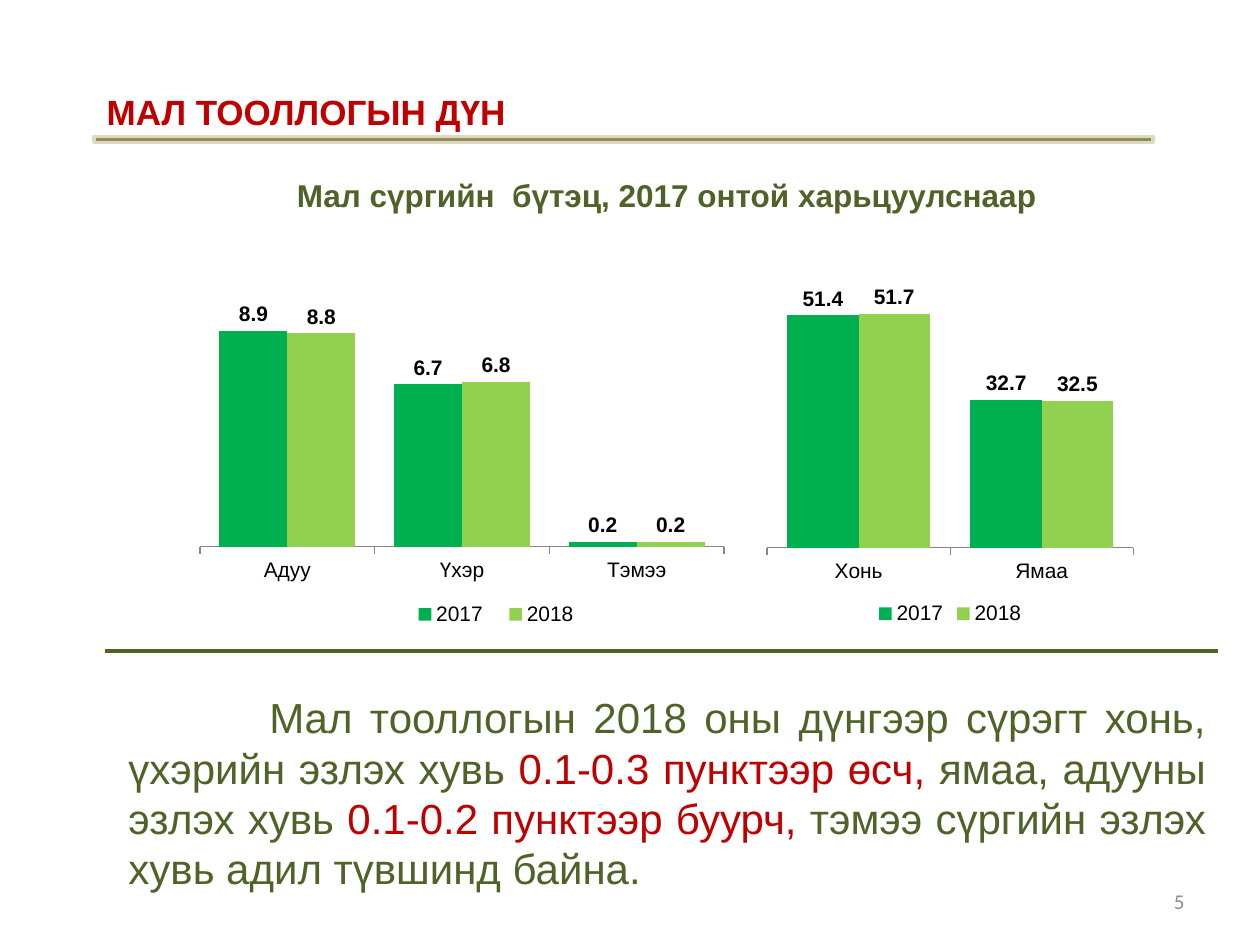
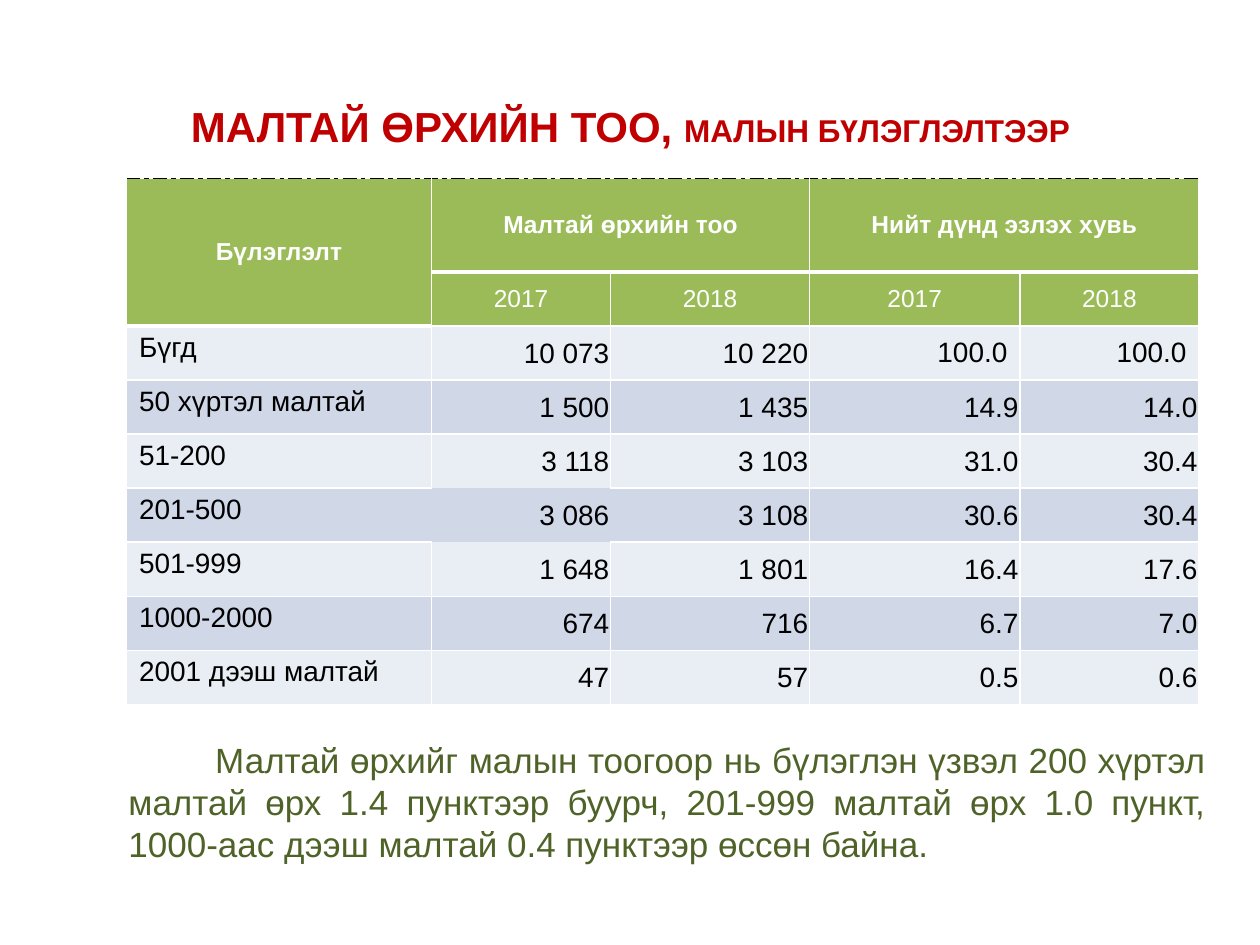
from lxml import etree
from pptx import Presentation
from pptx.chart.data import CategoryChartData
from pptx.dml.color import RGBColor
from pptx.enum.chart import XL_CHART_TYPE, XL_LEGEND_POSITION, XL_LABEL_POSITION, XL_TICK_MARK
from pptx.enum.shapes import MSO_CONNECTOR, MSO_SHAPE
from pptx.enum.text import MSO_ANCHOR, PP_ALIGN
from pptx.oxml.ns import qn
from pptx.util import Cm, Pt

LEFT, CENTER, RIGHT, JUSTIFY = PP_ALIGN.LEFT, PP_ALIGN.CENTER, PP_ALIGN.RIGHT, PP_ALIGN.JUSTIFY
TOP, MIDDLE = MSO_ANCHOR.TOP, MSO_ANCHOR.MIDDLE
COLUMNS = XL_CHART_TYPE.COLUMN_CLUSTERED
LEGEND_BOTTOM = XL_LEGEND_POSITION.BOTTOM
OUTSIDE_END = XL_LABEL_POSITION.OUTSIDE_END
TICK_OUT = XL_TICK_MARK.OUTSIDE

RED = RGBColor(0xC0, 0x00, 0x00)
DARK_GREEN = RGBColor(0x4F, 0x62, 0x28)
BLACK = RGBColor(0x00, 0x00, 0x00)
WHITE = RGBColor(0xFF, 0xFF, 0xFF)
GRAY = RGBColor(0x8C, 0x8C, 0x8C)
AXIS_GRAY = RGBColor(0x86, 0x86, 0x86)
KHAKI = RGBColor(0x94, 0x8A, 0x54)
SAND = RGBColor(0xDD, 0xD9, 0xC3)
HEADER_GREEN = RGBColor(0x9B, 0xBB, 0x59)
ROW_FILLS = (RGBColor(0xE9, 0xED, 0xF4), RGBColor(0xD0, 0xD8, 0xE8))
SERIES_COLORS = (RGBColor(0x00, 0xB0, 0x50), RGBColor(0x92, 0xD0, 0x50))
FONT = "Arial"
YEARS = ("2017", "2018")
VALUE_FORMAT = "###0.0"

COLUMN_WIDTHS = (6.15, 3.61, 4.01, 4.24, 3.61)
HEADER_HEIGHT, ROW_HEIGHT = 1.88, 1.09
HEADINGS = ("Бүлэглэлт", "Малтай өрхийн тоо", "", "Нийт дүнд эзлэх хувь", "")
HOUSEHOLDS = (
    ("Бүгд", "10 073", "10 220", "100.0", "100.0"),
    ("50 хүртэл малтай", "1 500", "1 435", "14.9", "14.0"),
    ("51-200", "3 118", "3 103", "31.0", "30.4"),
    ("201-500", "3 086", "3 108", "30.6", "30.4"),
    ("501-999", "1 648", "1 801", "16.4", "17.6"),
    ("1000-2000", "674", "716", "6.7", "7.0"),
    ("2001 дээш малтай", "47", "57", "0.5", "0.6"),
)
# Cell sides without a border, around the 2017 cell of the 201-500 group
OPEN_SIDES = {(4, 1): "B", (5, 0): "R", (5, 1): "LRTB", (5, 2): "L", (6, 1): "T"}


def set_font(font, size, color, bold=False, name=FONT):
    font.name = name
    font.size = Pt(size)
    font.bold = bold
    font.color.rgb = color


def write_text(tf, runs, size=18, color=BLACK, bold=False, name=FONT, align=LEFT, indent=0):
    """Fill the first paragraph; runs is a string or (text, overrides) pairs."""
    p = tf.paragraphs[0]
    p.alignment = align
    if indent:
        p._p.get_or_add_pPr().set("indent", str(Cm(indent)))
    base = dict(size=size, color=color, bold=bold, name=name)
    for text, overrides in [(runs, {})] if isinstance(runs, str) else runs:
        r = p.add_run()
        r.text = text
        set_font(r.font, **{**base, **overrides})


def add_text(slide, box, runs, anchor=TOP, **text_format):
    tf = slide.shapes.add_textbox(*map(Cm, box)).text_frame
    tf.word_wrap = True
    tf.vertical_anchor = anchor
    write_text(tf, runs, **text_format)


def add_title(slide, box, runs, size):
    add_text(slide, box, runs, size=size, color=RED, bold=True, align=JUSTIFY)


def add_summary(slide, top, height, runs, size, indent):
    add_text(slide, (2.34, top, 22.22, height), runs, size=size, color=DARK_GREEN,
             align=JUSTIFY, indent=indent)


def add_title_bar(slide):
    sp = slide.shapes.add_shape(MSO_SHAPE.RECTANGLE, Cm(1.9), Cm(2.75), Cm(21.34), Cm(0.12))
    sp.shadow.inherit = False
    sp.fill.solid()
    sp.fill.fore_color.rgb = KHAKI
    sp.line.color.rgb = SAND
    sp.line.width = Pt(2)


def add_divider(slide, left, right, y):
    line = slide.shapes.add_connector(MSO_CONNECTOR.STRAIGHT, Cm(left), Cm(y), Cm(right), Cm(y))
    line.line.color.rgb = DARK_GREEN
    line.line.width = Pt(2.25)
    etree.SubElement(line._element.spPr, qn("a:effectLst"))


def make_layout(box, inner=False):
    """Manual chart layout from (x, y, width, height) as parts of the chart."""
    layout = etree.Element(qn("c:layout"))
    manual = etree.SubElement(layout, qn("c:manualLayout"))
    settings = [("layoutTarget", "inner")] if inner else []
    settings += [("xMode", "edge"), ("yMode", "edge"), *zip("xywh", box)]
    for tag, value in settings:
        etree.SubElement(manual, qn("c:" + tag)).set("val", str(value))
    return layout


def place_part(part, box, inner=False):
    for old in part.findall(qn("c:layout")):
        part.remove(old)
    layout = make_layout(box, inner)
    if inner:
        part.insert(0, layout)
    else:
        part.find(qn("c:legendPos")).addnext(layout)


def add_column_chart(slide, box, categories, rows, top_value, plot_box, legend_box=None):
    data = CategoryChartData(number_format=VALUE_FORMAT)
    data.categories = categories
    for year, values in zip(YEARS, rows):
        data.add_series(year, values)
    chart = slide.shapes.add_chart(COLUMNS, *map(Cm, box), data).chart
    set_font(chart.font, 12, BLACK)
    chart.has_title = False

    chart.has_legend = True
    chart.legend.position = LEGEND_BOTTOM
    chart.legend.include_in_layout = False
    set_font(chart.legend.font, 12, BLACK)
    if legend_box:
        place_part(chart.legend._element, legend_box)
    place_part(chart._chartSpace.chart.plotArea, plot_box, inner=True)

    chart.value_axis.visible = False
    chart.value_axis.has_major_gridlines = False
    chart.value_axis.minimum_scale = 0
    chart.value_axis.maximum_scale = top_value
    axis = chart.category_axis
    axis.major_tick_mark = TICK_OUT
    axis.format.line.color.rgb = AXIS_GRAY
    set_font(axis.tick_labels.font, 12, BLACK)

    plot = chart.plots[0]
    plot.gap_width = 57
    plot.overlap = 0
    plot.vary_by_categories = False
    for series, color in zip(plot.series, SERIES_COLORS):
        series.invert_if_negative = False
        series.format.fill.solid()
        series.format.fill.fore_color.rgb = color
        labels = series.data_labels
        labels.show_value = True
        labels.position = OUTSIDE_END
        labels.number_format = VALUE_FORMAT
        labels.number_format_is_linked = False
        set_font(labels.font, 12, BLACK, bold=True)


def add_border(cell, side, width=1, color=WHITE, dash="solid"):
    """Draw one side (L, R, T or B); no width leaves the side open."""
    ln = etree.SubElement(cell._tc.get_or_add_tcPr(), qn("a:ln" + side))
    if not width:
        etree.SubElement(ln, qn("a:noFill"))
        return
    ln.set("w", str(Pt(width)))
    fill = etree.SubElement(ln, qn("a:solidFill"))
    etree.SubElement(fill, qn("a:srgbClr")).set("val", str(color))
    etree.SubElement(ln, qn("a:prstDash")).set("val", dash)


def add_cell_borders(cell, row, col):
    under_heading = 2 if col == 0 else 1
    for side in "LRTB":
        if side in OPEN_SIDES.get((row, col), ""):
            add_border(cell, side, width=0)
        elif row == 0 and side == "T":
            add_border(cell, side, color=BLACK, dash="sysDashDot")
        elif (side == "B" and row < under_heading) or (side == "T" and row == under_heading):
            add_border(cell, side, width=3)
        else:
            add_border(cell, side)


def fill_cell(cell, text, row, col):
    add_cell_borders(cell, row, col)
    cell.fill.solid()
    cell.fill.fore_color.rgb = HEADER_GREEN if row < 2 else ROW_FILLS[row % 2]
    cell.vertical_anchor = TOP if row > 1 and col == 0 else MIDDLE
    if row > 1 and col > 0 and text != "100.0":
        cell.margin_left = cell.margin_right = cell.margin_top = Cm(0.03)
        cell.margin_bottom = 0
    if not text:
        return
    if row < 2:
        write_text(cell.text_frame, text, size=14, color=WHITE, bold=row == 0, align=CENTER)
    else:
        write_text(cell.text_frame, text, size=16, align=RIGHT if col else LEFT)


def add_household_table(slide):
    rows = (HEADINGS, ("", *YEARS, *YEARS), *HOUSEHOLDS)
    height = HEADER_HEIGHT + ROW_HEIGHT * (len(rows) - 1)
    table = slide.shapes.add_table(len(rows), len(COLUMN_WIDTHS), Cm(2.55), Cm(3.6),
                                   Cm(sum(COLUMN_WIDTHS)), Cm(height)).table
    table.first_row = table.horz_banding = False
    for column, width in zip(table.columns, COLUMN_WIDTHS):
        column.width = Cm(width)
    for i, texts in enumerate(rows):
        table.rows[i].height = Cm(ROW_HEIGHT if i else HEADER_HEIGHT)
        for j, text in enumerate(texts):
            fill_cell(table.cell(i, j), text, i, j)
    for first, last in (((0, 0), (1, 0)), ((0, 1), (0, 2)), ((0, 3), (0, 4))):
        table.cell(*first).merge(table.cell(*last))


def build_herd_slide(slide):
    add_text(slide, (18.21, 17.65, 5.92, 1.02), "5", anchor=MIDDLE,
             size=12, color=GRAY, name="Calibri", align=RIGHT)
    add_title(slide, (1.9, 1.7, 23.5, 1.12), "МАЛ ТООЛЛОГЫН ДҮН", 20)
    add_title_bar(slide)
    add_text(slide, (2.11, 3.43, 22.66, 1.02), "Мал сүргийн  бүтэц, 2017 онтой харьцуулснаар",
             size=18, color=DARK_GREEN, bold=True, align=CENTER)
    add_divider(slide, 2.12, 24.56, 13.13)
    red = {"color": RED}
    add_summary(slide, 13.82, 4.37, [
        ("Мал тооллогын 2018 оны дүнгээр сүрэгт хонь, үхэрийн эзлэх хувь ", {}),
        ("0.1-0.3 пунктээр өсч, ", red),
        ("ямаа, адууны эзлэх хувь ", {}),
        ("0.1-0.2 пунктээр буурч,", red),
        (" тэмээ сүргийн эзлэх хувь адил түвшинд байна.", {}),
    ], size=24, indent=2.84)
    add_column_chart(slide, (4.02, 5.92, 10.59, 6.99), ("Адуу", "Үхэр", "Тэмээ"),
                     ((8.9, 6.7, 0.2), (8.8, 6.8, 0.2)), 10,
                     plot_box=(0, 0.03, 1, 0.7), legend_box=(0.38, 0.88, 0.37, 0.09))
    add_column_chart(slide, (15.45, 5.5, 7.41, 7.2), ("Хонь", "Ямаа"),
                     ((51.4, 32.7), (51.7, 32.5)), 60, plot_box=(0, 0.01, 1, 0.76))


def build_household_slide(slide):
    add_household_table(slide)
    add_title(slide, (3.6, 1.9, 19.48, 1.28),
              [("МАЛТАЙ ӨРХИЙН ТОО, ", {}), ("МАЛЫН БҮЛЭГЛЭЛТЭЭР", {"size": 18})], 24)
    add_summary(slide, 14.76, 2.82,
                "Малтай өрхийг малын тоогоор нь бүлэглэн үзвэл 200 хүртэл малтай өрх "
                "1.4 пунктээр буурч, 201-999 малтай өрх 1.0 пункт, 1000-аас дээш малтай "
                "0.4 пунктээр өссөн байна.", size=20, indent=1.75)


def main():
    prs = Presentation()
    prs.slide_width, prs.slide_height = Cm(25.4), Cm(19.05)
    for build in (build_herd_slide, build_household_slide):
        build(prs.slides.add_slide(prs.slide_layouts[6]))
    prs.save("out.pptx")


if __name__ == "__main__":
    main()
